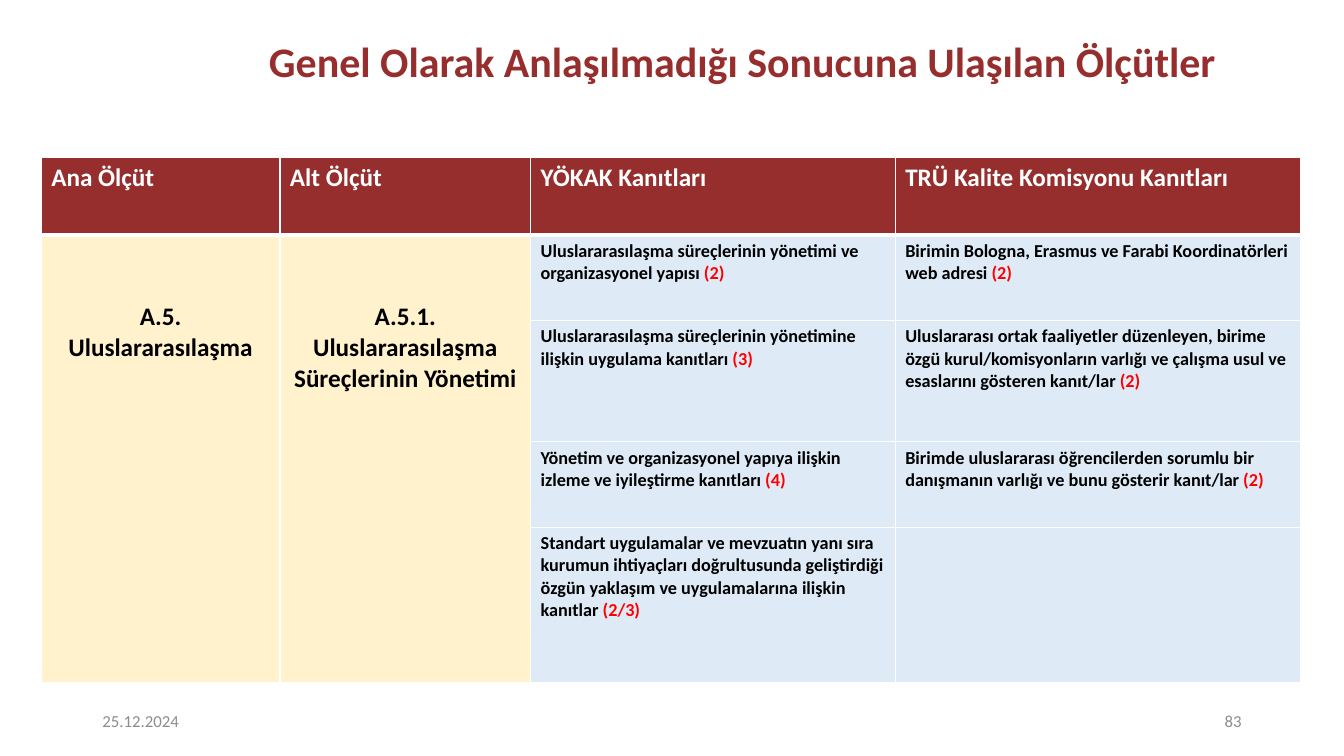
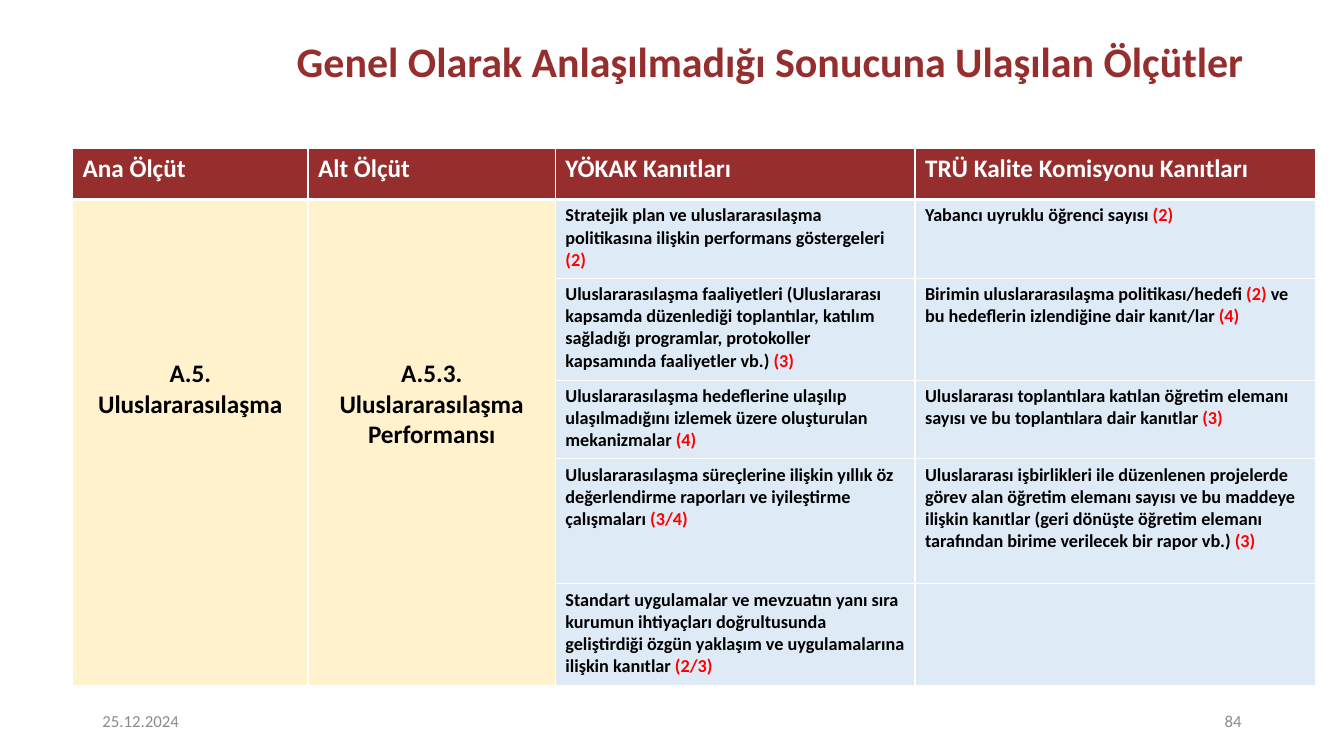
"""Build two slides of quality criteria that were generally not understood."""
from dataclasses import dataclass

from lxml import etree
from pptx import Presentation
from pptx.dml.color import RGBColor
from pptx.enum import text as t
from pptx.oxml import ns
from pptx.util import Cm, Pt

HUES = {"brand": "962E2E", "white": "FFFFFF", "black": "000000", "score": "FF0000",
        "cream": "FFF2CC", "sky": "DEEBF7", "grey": "8C8C8C"}
FONT = "Calibri"
TITLE = "Genel Olarak Anlaşılmadığı Sonucuna Ulaşılan Ölçütler"
DATE = "25.12.2024"
HEADS = ("Ana Ölçüt", "Alt Ölçüt", "YÖKAK Kanıtları", "TRÜ Kalite Komisyonu Kanıtları")
MAIN = "A.5. Uluslararasılaşma"
SHARES = (2.37, 2.49, 3.62, 4.03)
Runs = tuple[str, ...]
OWN = ("Standart uygulamalar ve mevzuatın yanı sıra kurumun ihtiyaçları doğrultusunda "
       "geliştirdiği özgün yaklaşım ve uygulamalarına ilişkin kanıtlar ", "(2/3)")


@dataclass(frozen=True)
class Page:
    number: int
    title_left: float
    left: float
    top: float
    width: float
    heights: tuple[float, ...]
    inset: float
    topic: str
    proofs: tuple[tuple[Runs, Runs], ...]


PAGES = (
    Page(83, 5.08, 1.04, 3.96, 31.75, (1.96, 2.16, 3.05, 2.16, 3.91), 1.68,
         "A.5.1. Uluslararasılaşma Süreçlerinin Yönetimi", (
             (("Uluslararasılaşma süreçlerinin yönetimi ve organizasyonel yapısı ", "(2)"),
              ("Birimin Bologna, Erasmus ve Farabi Koordinatörleri web adresi ", "(2)")),
             (("Uluslararasılaşma süreçlerinin yönetimine ilişkin uygulama kanıtları ", "(3)"),
              ("Uluslararası ortak faaliyetler düzenleyen, birime özgü kurul/komisyonların "
               "varlığı ve çalışma usul ve esaslarını gösteren kanıt/lar ", "(2)")),
             (("Yönetim ve organizasyonel yapıya ilişkin izleme ve iyileştirme kanıtları ", "(4)"),
              ("Birimde uluslararası öğrencilerden sorumlu bir danışmanın varlığı ve bunu "
               "gösterir kanıt/lar ", "(2)")),
             (OWN, ()),
         )),
    Page(84, 5.78, 1.83, 3.73, 31.32, (1.3, 1.98, 2.57, 1.98, 3.15, 2.57), 4.0,
         "A.5.3. Uluslararasılaşma Performansı", (
             (("Stratejik plan ve uluslararasılaşma politikasına ilişkin performans "
               "göstergeleri ", "(2)"),
              ("Yabancı uyruklu öğrenci sayısı ", "(2)")),
             (("Uluslararasılaşma faaliyetleri (Uluslararası kapsamda düzenlediği toplantılar, "
               "katılım sağladığı programlar, protokoller kapsamında faaliyetler vb.) ", "(3)"),
              ("Birimin uluslararasılaşma politikası/hedefi ", "(2)",
               " ve bu hedeflerin izlendiğine dair kanıt/lar ", "(4)")),
             (("Uluslararasılaşma hedeflerine ulaşılıp ulaşılmadığını izlemek üzere "
               "oluşturulan mekanizmalar ", "(4)"),
              ("Uluslararası toplantılara katılan öğretim elemanı sayısı ve bu toplantılara "
               "dair kanıtlar ", "(3)")),
             (("Uluslararasılaşma süreçlerine ilişkin yıllık öz değerlendirme raporları ve "
               "iyileştirme çalışmaları ", "(3/4)"),
              ("Uluslararası işbirlikleri ile düzenlenen projelerde görev alan öğretim elemanı "
               "sayısı ve bu maddeye ilişkin kanıtlar (geri dönüşte öğretim elemanı tarafından "
               "birime verilecek bir rapor vb.) ", "(3)")),
             (OWN, ()),
         )),
)


def hue(name: str) -> RGBColor:
    return RGBColor.from_string(HUES[name])


def write(frame, runs: Runs, size: float = 18, color: str = "black", bold: bool = True,
          align=t.PP_ALIGN.LEFT, spacing: float = 1.0) -> None:
    frame.word_wrap = True
    para = frame.paragraphs[0]
    para.alignment = align
    para.line_spacing = spacing
    for i, words in enumerate(runs):
        run = para.add_run()
        run.text = words
        run.font.name = FONT
        run.font.size = Pt(size)
        run.font.bold = bold
        run.font.color.rgb = hue("score" if i % 2 else color)


def paint(cell, fill: str, top: float = 1, bottom: float = 1) -> None:
    props = cell._tc.get_or_add_tcPr()
    for side, width in zip("LRTB", (1, 1, top, bottom)):
        line = etree.SubElement(props, ns.qn(f"a:ln{side}"), w=str(Pt(width)))
        solid = etree.SubElement(line, ns.qn("a:solidFill"))
        etree.SubElement(solid, ns.qn("a:srgbClr"), val=HUES["white"])
    cell.fill.solid()
    cell.fill.fore_color.rgb = hue(fill)


def add_title(slide, page: Page) -> None:
    title = slide.shapes.title
    title.left, title.top = Cm(page.title_left), Cm(0.46)
    title.width, title.height = Cm(27.28), Cm(2.29)
    frame = title.text_frame
    frame.auto_size = t.MSO_AUTO_SIZE.NONE
    frame.vertical_anchor = t.MSO_ANCHOR.MIDDLE
    write(frame, (TITLE,), size=30, color="brand", align=t.PP_ALIGN.CENTER, spacing=0.9)


def add_grid(slide, page: Page) -> None:
    count = len(page.heights)
    grid = slide.shapes.add_table(count, len(HEADS), Cm(page.left), Cm(page.top),
                                  Cm(page.width), Cm(sum(page.heights))).table
    for col, share in zip(grid.columns, SHARES):
        col.width = Cm(page.width * share / sum(SHARES))
    for row, height in zip(grid.rows, page.heights):
        row.height = Cm(height)
    for r in range(count):
        for c in range(len(HEADS)):
            fill = "brand" if r == 0 else "cream" if c < 2 else "sky"
            paint(grid.cell(r, c), fill, 3 if r == 1 else 1, 3 if r == 0 else 1)
    for c, head in enumerate(HEADS):
        write(grid.cell(0, c).text_frame, (head,), color="white")
    for c, topic in enumerate((MAIN, page.topic)):
        cell = grid.cell(1, c)
        cell.merge(grid.cell(count - 1, c))
        cell.margin_top = Cm(page.inset)
        write(cell.text_frame, (topic,), align=t.PP_ALIGN.CENTER)
    for r, pair in enumerate(page.proofs, 1):
        for c, runs in enumerate(pair, 2):
            write(grid.cell(r, c).text_frame, runs, size=13)


def add_foot(slide, page: Page) -> None:
    for left, words, align in ((2.33, DATE, t.PP_ALIGN.LEFT),
                               (23.92, str(page.number), t.PP_ALIGN.RIGHT)):
        frame = slide.shapes.add_textbox(Cm(left), Cm(17.66), Cm(7.62), Cm(1.01)).text_frame
        frame.vertical_anchor = t.MSO_ANCHOR.MIDDLE
        write(frame, (words,), size=12, color="grey", bold=False, align=align)


def main() -> None:
    deck = Presentation()
    deck.slide_width, deck.slide_height = Cm(33.87), Cm(19.05)
    for page in PAGES:
        slide = deck.slides.add_slide(deck.slide_layouts[5])
        add_title(slide, page)
        add_grid(slide, page)
        add_foot(slide, page)
    deck.save("out.pptx")


if __name__ == "__main__":
    main()
